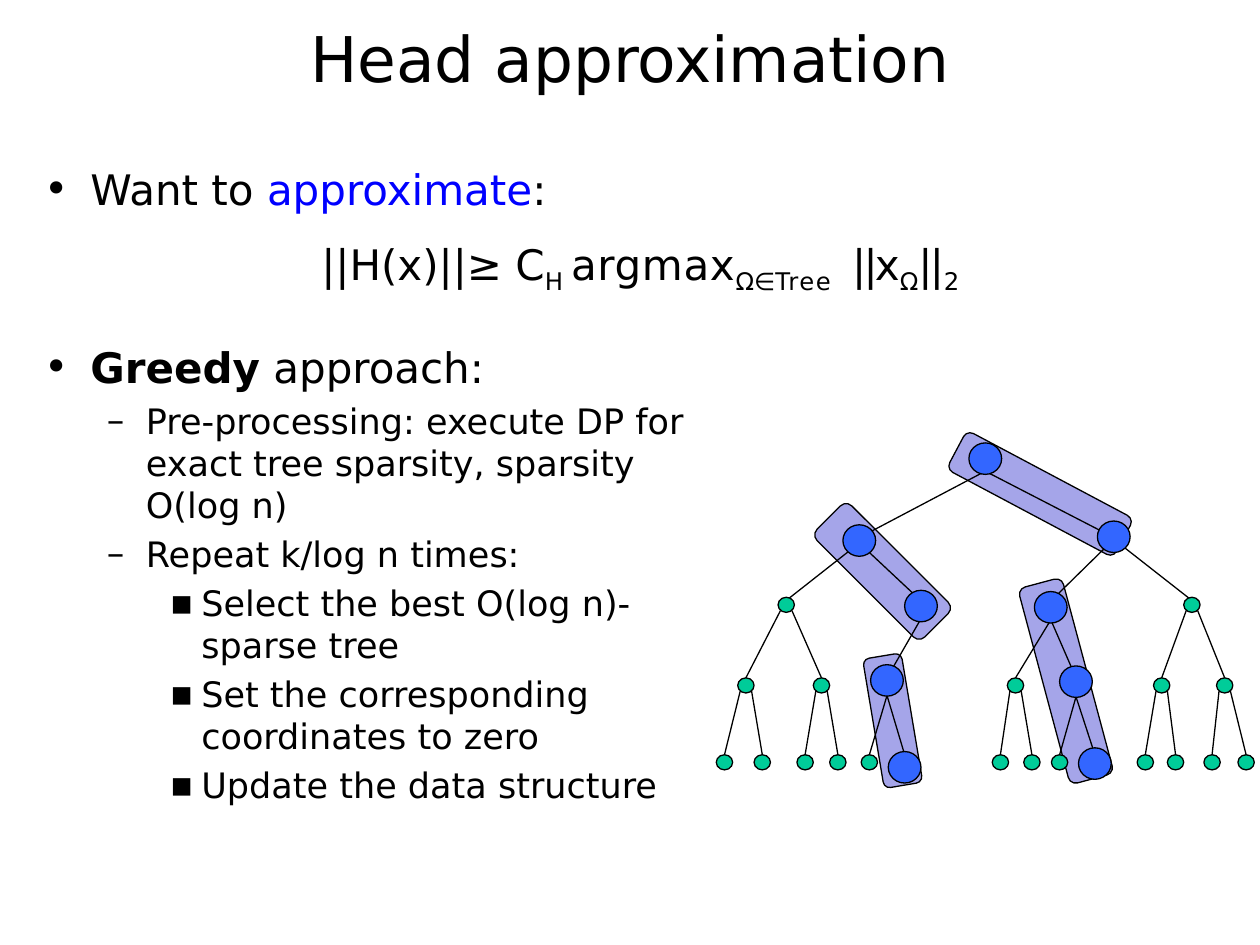
from dataclasses import dataclass

import pptx
import pptx.util
from lxml import etree
from pptx.dml.color import RGBColor
from pptx.enum.shapes import MSO_CONNECTOR, MSO_SHAPE
from pptx.enum.text import MSO_ANCHOR, MSO_AUTO_SIZE, PP_ALIGN
from pptx.oxml.ns import qn

BLACK = RGBColor(0x00, 0x00, 0x00)
EMPHASIS = RGBColor(0x00, 0x00, 0xFF)
GREEN = RGBColor(0x00, 0xCC, 0x99)
BLUE = RGBColor(0x33, 0x66, 0xFF)
LAVENDER = RGBColor(0xA5, 0xA5, 0xE9)
FONT = "DejaVu Sans"

# The slide is a grid of 100 columns and 75 rows of square cells.
COLUMNS, ROWS = 100, 75
CELL = pptx.util.Inches(0.1)


@dataclass
class Bullet:
    runs: list
    level: int = 0
    size: float = 20
    before: float = 4


@dataclass
class Bar:
    column: float
    row: float
    width: float
    height: float
    rotation: float


@dataclass
class Node:
    column: float
    row: float
    level: int
    picked: bool


# Symbol, left margin and hanging indent (in columns) of each level
BULLET_STYLES = [("•", 3.7, 3.7), ("–", 8.1, 3.1), ("▪", 12.5, 2.5)]
BULLETS = [
    Bullet([("Want to ", {}), ("approximate", {"color": EMPHASIS}), (":", {})],
           size=24, before=0),
    Bullet([("Greedy", {"bold": True}), (" approach:", {})], size=24, before=73),
    Bullet([("Pre-processing: execute DP for exact tree sparsity, "
             "sparsity O(log n)", {})], level=1),
    Bullet([("Repeat k/log n times:", {})], level=1),
    Bullet([("Select the best O(log n)-sparse tree", {})], level=2),
    Bullet([("Set the corresponding coordinates to zero", {})], level=2),
    Bullet([("Update the data structure", {})], level=2),
]
SUBSCRIPT = -25
FORMULA = [
    ("||H(x)||≥ C", {}),
    ("H ", {"baseline": SUBSCRIPT}),
    ("argmax", {"spacing": 0.4}),
    ("Ω", {"baseline": SUBSCRIPT, "spacing": -1.2}),
    ("∈", {"baseline": SUBSCRIPT, "spacing": -1.6}),
    ("Tree", {"baseline": SUBSCRIPT, "spacing": 0.9}),
    (" ", {"baseline": SUBSCRIPT, "spacing": 6.8}),
    ("||x", {"spacing": -1.6}),
    ("Ω", {"baseline": SUBSCRIPT, "spacing": -1.2}),
    ("||", {"spacing": -1.6}),
    ("2", {"baseline": SUBSCRIPT, "spacing": -1.6}),
]
BARS = [
    Bar(80.8, 31.7, 3.5, 15, -62),
    Bar(68.1, 39.3, 3.9, 12.1, -45),
    Bar(69.3, 52, 3.1, 10.4, -9.5),
    Bar(82.8, 46, 3.6, 16.1, -15),
]

# Node centres, level by level; children of index i are 2i and 2i + 1
LEVEL_COLUMNS = [
    [78.2],
    [68.2, 88.4],
    [62.4, 73.1, 83.4, 94.6],
    [59.2, 65.2, 70.4, None, 80.6, 85.4, 92.2, 97.2],
    [57.5, 60.5, 63.9, 66.5, 69, 71.8, None, None,
     79.4, 81.9, 84.1, 86.9, 90.9, 93.3, 96.2, 98.9],
]
LEVEL_ROWS = [36.4, 42.8, 48, 54.4, 60.5]
PICKED_ROWS = {(0, 0): 36.4, (1, 0): 42.9, (1, 1): 42.6, (2, 1): 48.1, (2, 2): 48.2,
               (3, 2): 54, (3, 5): 54.1, (4, 5): 60.9, (4, 11): 60.6}
ENTRY_ROWS = [None, 42.3, 47.5, 53.8, 59.9]
ENTRY_INWARD = [0, 0.7, 0.2, 0, 0]
PICKED_DROPS = [1, 0.2, 1, 1.2]


def cells(count: float) -> int:
    return round(count * CELL)


def box(*lengths: float) -> list:
    return [cells(length) for length in lengths]


def add_run(paragraph, text: str, *, size: float = 24, color: RGBColor = BLACK,
            bold: bool = False, baseline: int = 0, spacing: float = 0) -> None:
    run = paragraph.add_run()
    run.text = text
    font = run.font
    font.name, font.size, font.bold = FONT, pptx.util.Pt(size), bold
    font.color.rgb = color
    properties = run._r.get_or_add_rPr()
    if baseline:
        properties.set("baseline", str(baseline * 1000))
    if spacing:
        properties.set("spc", str(round(spacing * 100)))


def add_text_frame(slide, *bounds: float):
    frame = slide.shapes.add_textbox(*box(*bounds)).text_frame
    frame.word_wrap = True
    return frame


def add_bullets(slide) -> None:
    frame = add_text_frame(slide, 2.5, 12.5, 54.3, 59.2)
    for index, bullet in enumerate(BULLETS):
        paragraph = frame.add_paragraph() if index else frame.paragraphs[0]
        paragraph.level = bullet.level
        paragraph.space_before = pptx.util.Pt(bullet.before)
        symbol, margin, hanging = BULLET_STYLES[bullet.level]
        properties = paragraph._p.get_or_add_pPr()
        properties.set("marL", str(cells(margin)))
        properties.set("indent", str(-cells(hanging)))
        etree.SubElement(properties, qn("a:buFont")).set("typeface", FONT)
        etree.SubElement(properties, qn("a:buChar")).set("char", symbol)
        for text, style in bullet.runs:
            add_run(paragraph, text, size=bullet.size, **style)


def add_formula(slide) -> None:
    frame = add_text_frame(slide, 23.6, 14.2, 70.9, 11.7)
    frame.margin_left, frame.margin_top = cells(1.9), cells(4.7)
    for text, style in FORMULA:
        add_run(frame.paragraphs[0], text, **style)


def add_outlined(slide, kind: MSO_SHAPE, fill: RGBColor, *bounds: float):
    shape = slide.shapes.add_shape(kind, *box(*bounds))
    shape.shadow.inherit = False
    shape.fill.solid()
    shape.fill.fore_color.rgb = fill
    shape.line.color.rgb = BLACK
    shape.line.width = pptx.util.Pt(0.75)
    return shape


def add_node(slide, node: Node) -> None:
    width, height = (2.6, 2.5) if node.picked else (1.3, 1.2)
    add_outlined(slide, MSO_SHAPE.OVAL, BLUE if node.picked else GREEN,
                 node.column - width / 2, node.row - height / 2, width, height)


def add_edge(slide, parent: Node, child: Node) -> None:
    side = -1 if child.column < parent.column else 1
    if parent.picked:
        spread, drop = 0, PICKED_DROPS[parent.level]
    else:
        spread, drop = 0.45, 0.45
    connector = slide.shapes.add_connector(MSO_CONNECTOR.STRAIGHT, *box(
        parent.column + side * spread, parent.row + drop,
        child.column - side * ENTRY_INWARD[child.level], ENTRY_ROWS[child.level]))
    connector.line.color.rgb = BLACK
    connector.line.width = pptx.util.Pt(0.75)
    etree.SubElement(connector._element.spPr, qn("a:effectLst"))


def add_tree(slide) -> None:
    for bar in BARS:
        shape = add_outlined(slide, MSO_SHAPE.ROUNDED_RECTANGLE, LAVENDER,
                             bar.column, bar.row, bar.width, bar.height)
        shape.rotation = bar.rotation
    nodes = {}
    for level, columns in enumerate(LEVEL_COLUMNS):
        for index, column in enumerate(columns):
            if column is not None:
                key = (level, index)
                row = PICKED_ROWS.get(key, LEVEL_ROWS[level])
                nodes[key] = Node(column, row, level, key in PICKED_ROWS)
    for (level, index), node in nodes.items():
        if level:
            add_edge(slide, nodes[level - 1, index // 2], node)
    for node in sorted(nodes.values(), key=lambda node: node.picked):
        add_node(slide, node)


def main() -> None:
    presentation = pptx.Presentation()
    presentation.slide_width, presentation.slide_height = box(COLUMNS, ROWS)
    slide = presentation.slides.add_slide(presentation.slide_layouts[5])
    title = slide.shapes.title
    title.left, title.top, title.width, title.height = box(7.5, -1.7, 85, 12.5)
    title.text_frame.auto_size = MSO_AUTO_SIZE.NONE
    title.text_frame.vertical_anchor = MSO_ANCHOR.MIDDLE
    title.text_frame.paragraphs[0].alignment = PP_ALIGN.CENTER
    add_run(title.text_frame.paragraphs[0], "Head approximation", size=36)
    add_bullets(slide)
    add_formula(slide)
    add_tree(slide)
    presentation.save("out.pptx")


if __name__ == "__main__":
    main()
